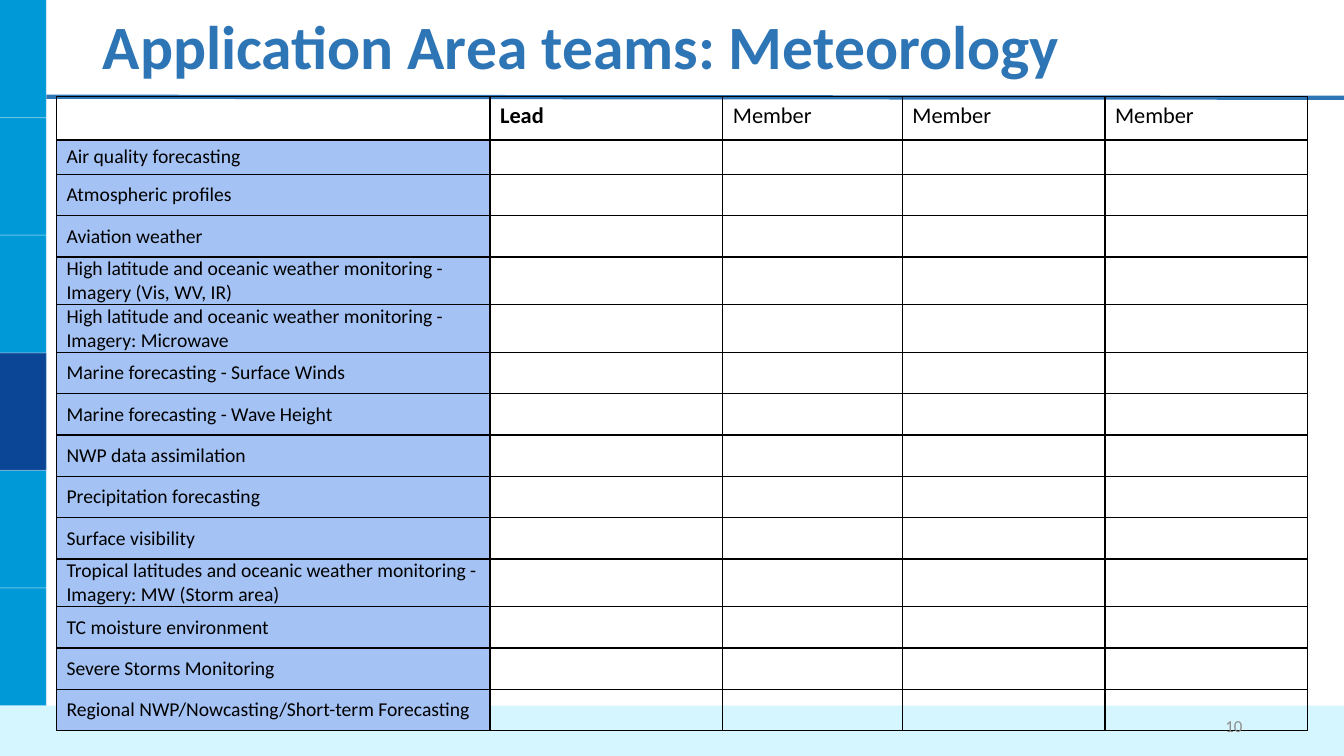
from lxml import etree
from pptx import Presentation
from pptx.dml.color import RGBColor
from pptx.enum.shapes import MSO_CONNECTOR, MSO_SHAPE
from pptx.enum.text import MSO_ANCHOR, PP_ALIGN
from pptx.oxml.ns import qn
from pptx.util import Inches, Pt

RECTANGLE = MSO_SHAPE.RECTANGLE
STRAIGHT = MSO_CONNECTOR.STRAIGHT
MIDDLE = MSO_ANCHOR.MIDDLE
LEFT, RIGHT = PP_ALIGN.LEFT, PP_ALIGN.RIGHT

TITLE = "Application Area teams: Meteorology"
PAGE_NUMBER = "10"
ROLES = ["", "Lead", "Member", "Member", "Member"]
SINGLE, DOUBLE = 0.41, 0.47
AREAS = [
    ("Air quality forecasting", 0.34),
    ("Atmospheric profiles", SINGLE),
    ("Aviation weather", SINGLE),
    ("High latitude and oceanic weather monitoring - Imagery (Vis, WV, IR)", DOUBLE),
    ("High latitude and oceanic weather monitoring - Imagery: Microwave", DOUBLE),
    ("Marine forecasting - Surface Winds", SINGLE),
    ("Marine forecasting - Wave Height", SINGLE),
    ("NWP data assimilation", SINGLE),
    ("Precipitation forecasting", SINGLE),
    ("Surface visibility", SINGLE),
    ("Tropical latitudes and oceanic weather monitoring - Imagery: MW (Storm area)", DOUBLE),
    ("TC moisture environment", SINGLE),
    ("Severe Storms Monitoring", SINGLE),
    ("Regional NWP/Nowcasting/Short-term Forecasting", SINGLE),
]
COLUMN_WIDTHS = [4.3, 2.31, 1.78, 2.01, 2.01]
HEADER_HEIGHT = 0.43
COLORS = {
    "sidebar": "0099D8", "marker": "0B4596", "footer": "D5F5FF", "title": "2E75B6",
    "area": "A4C2F4", "text": "000000", "divider": "FFFFFF", "number": "8C8C8C",
}
FONT = "Calibri"
WIDTH, HEIGHT = 13.33, 7.5
SIDEBAR_WIDTH = 0.46
FOOTER_TOP = 7
SIDEBAR_STEP = FOOTER_TOP / 6
TABLE_LEFT, TABLE_TOP = 0.56, 0.96


def rgb(name):
    return RGBColor.from_string(COLORS[name])


def add_block(left, top, width, height, color):
    block = slide.shapes.add_shape(
        RECTANGLE, Inches(left), Inches(top), Inches(width), Inches(height))
    block.shadow.inherit = False
    block.fill.solid()
    block.fill.fore_color.rgb = rgb(color)
    block.line.fill.background()


def add_rule(x1, y1, x2, y2, color, weight, opacity=100):
    rule = slide.shapes.add_connector(
        STRAIGHT, Inches(x1), Inches(y1), Inches(x2), Inches(y2))
    rule.line.color.rgb = rgb(color)
    rule.line.width = Pt(weight)
    properties = rule._element.spPr
    etree.SubElement(properties, qn("a:effectLst"))
    if opacity < 100:
        tint = properties.find(".//" + qn("a:srgbClr"))
        etree.SubElement(tint, qn("a:alpha"), val=str(opacity * 1000))


def write(frame, text, size, color, bold=False, align=LEFT):
    frame.text = text
    paragraph = frame.paragraphs[0]
    paragraph.alignment = align
    font = paragraph.font
    font.name, font.size, font.bold = FONT, Pt(size), bold
    font.color.rgb = rgb(color)


def add_borders(cell):
    properties = cell._tc.get_or_add_tcPr()
    for index, side in enumerate(("a:lnL", "a:lnR", "a:lnT", "a:lnB")):
        border = etree.Element(qn(side), w=str(Pt(1)))
        fill = etree.SubElement(border, qn("a:solidFill"))
        etree.SubElement(fill, qn("a:srgbClr"), val=COLORS["text"])
        properties.insert(index, border)


prs = Presentation()
prs.slide_width, prs.slide_height = Inches(WIDTH), Inches(HEIGHT)
slide = prs.slides.add_slide(prs.slide_layouts[5])

add_block(0, 0, SIDEBAR_WIDTH, HEIGHT, "sidebar")
add_block(0, 3 * SIDEBAR_STEP, SIDEBAR_WIDTH, SIDEBAR_STEP, "marker")
for step in range(1, 7):
    y = step * SIDEBAR_STEP
    add_rule(0, y, SIDEBAR_WIDTH, y, "divider", 0.75, 40)
add_rule(SIDEBAR_WIDTH, 0, SIDEBAR_WIDTH, HEIGHT, "divider", 0.75, 40)
add_block(0, FOOTER_TOP, WIDTH, HEIGHT - FOOTER_TOP, "footer")
add_rule(SIDEBAR_WIDTH, TABLE_TOP, WIDTH, TABLE_TOP + 0.01, "title", 3)

title = slide.shapes.title
title.left, title.top = Inches(0.92), Inches(0.04)
title.width, title.height = Inches(11.5), Inches(0.91)
title.text_frame.vertical_anchor = MIDDLE
write(title.text_frame, TITLE, 44, "title", True)
title.text_frame.paragraphs[0].line_spacing = 0.9

row_heights = [HEADER_HEIGHT] + [height for _, height in AREAS]
teams = slide.shapes.add_table(
    len(row_heights), len(ROLES), Inches(TABLE_LEFT), Inches(TABLE_TOP),
    Inches(sum(COLUMN_WIDTHS)), Inches(sum(row_heights))).table
teams.first_row = teams.horz_banding = False
for column, width in zip(teams.columns, COLUMN_WIDTHS):
    column.width = Inches(width)
for row, height in zip(teams.rows, row_heights):
    row.height = Inches(height)
for cell in teams.iter_cells():
    cell.fill.background()
    add_borders(cell)

for col, role in enumerate(ROLES):
    write(teams.cell(0, col).text_frame, role, 16, "text", role == "Lead")
for row, (area, _) in enumerate(AREAS, 1):
    for col in range(len(ROLES)):
        cell = teams.cell(row, col)
        cell.margin_right = cell.margin_top = cell.margin_bottom = 0
    label = teams.cell(row, 0)
    label.vertical_anchor = MIDDLE
    label.fill.solid()
    label.fill.fore_color.rgb = rgb("area")
    write(label.text_frame, area, 14, "text")

number = slide.shapes.add_textbox(
    Inches(9.42), Inches(FOOTER_TOP), Inches(3), Inches(0.4)).text_frame
number.word_wrap = True
number.vertical_anchor = MIDDLE
write(number, PAGE_NUMBER, 12, "number", align=RIGHT)

prs.save("out.pptx")
